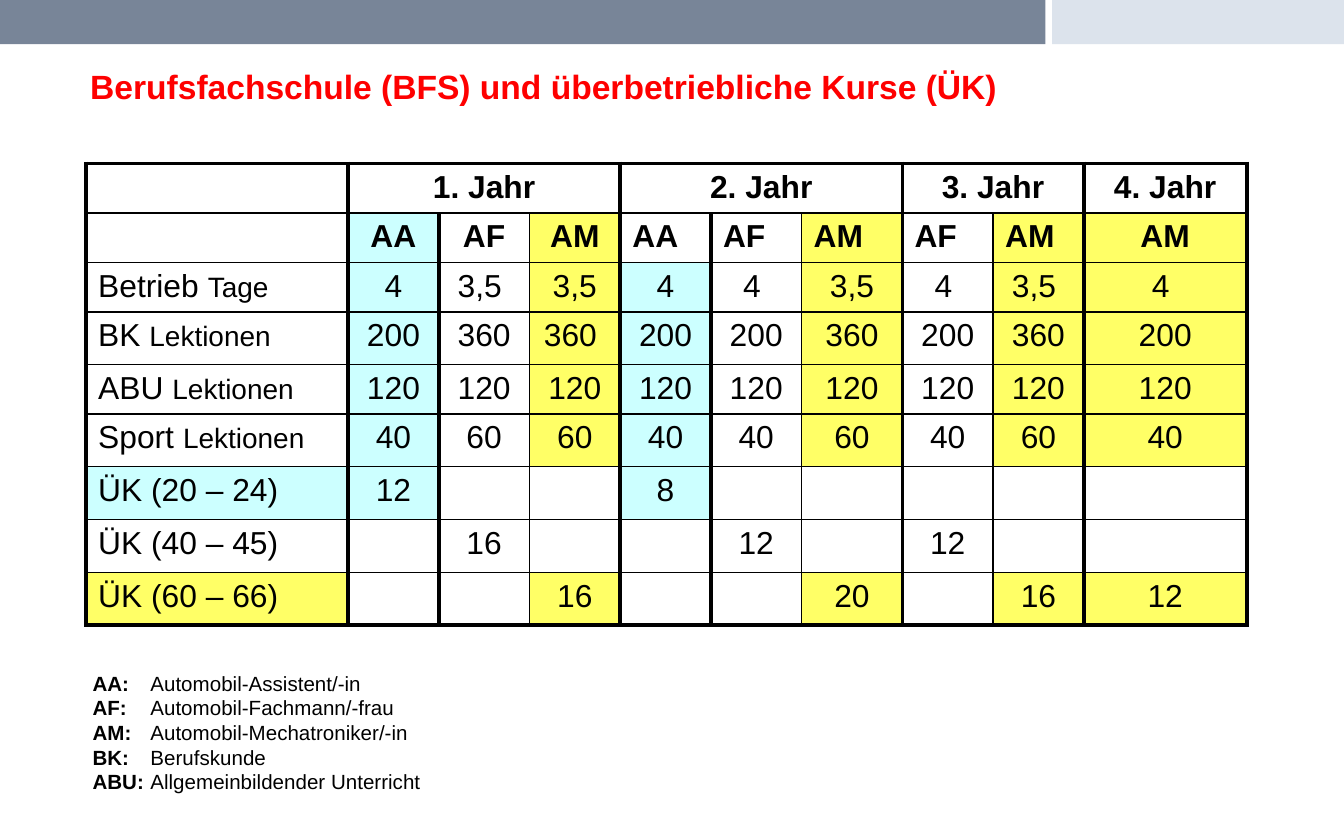
import pptx
import pptx.dml.color
import pptx.enum.shapes
import pptx.enum.text
import pptx.oxml
import pptx.oxml.ns
import pptx.util
from lxml import etree

Pt = pptx.util.Pt
RGBColor = pptx.dml.color.RGBColor
ALIGN = pptx.enum.text.PP_ALIGN
qn = pptx.oxml.ns.qn

BLACK = RGBColor(0x00, 0x00, 0x00)
RED = RGBColor(0xFE, 0x00, 0x00)
SLATE = RGBColor(0x78, 0x85, 0x98)
PALE_BLUE = RGBColor(0xDC, 0xE3, 0xEC)
CYAN = RGBColor(0xCC, 0xFF, 0xFF)
YELLOW = RGBColor(0xFF, 0xFF, 0x66)


def write(paragraph, text, size=17, bold=False, color=BLACK, align=ALIGN.LEFT):
    paragraph.alignment = align
    run = paragraph.add_run()
    run.text = text
    run.font.name = "Arial"
    run.font.size = Pt(size)
    run.font.bold = bold
    run.font.color.rgb = color


def set_borders(cell, widths):
    properties = cell._tc.get_or_add_tcPr()
    for position, (side, width) in enumerate(zip("LRTB", widths)):
        line = etree.Element(qn(f"a:ln{side}"), w=str(Pt(width)))
        fill = etree.SubElement(line, qn("a:solidFill"))
        etree.SubElement(fill, qn("a:srgbClr"), val=str(BLACK))
        properties.insert(position, line)


presentation = pptx.Presentation()
presentation.slide_width = Pt(720)
presentation.slide_height = Pt(450)
slide = presentation.slides.add_slide(presentation.slide_layouts[5])

# Bars along the top edge
for left, width, color in ((0, 560, SLATE), (563.6, 156.4, PALE_BLUE)):
    bar = slide.shapes.add_shape(
        pptx.enum.shapes.MSO_SHAPE.RECTANGLE, Pt(left), 0, Pt(width), Pt(23.6))
    bar.shadow.inherit = False
    bar.fill.solid()
    bar.fill.fore_color.rgb = color
    bar.line.fill.background()

# Title
title = slide.shapes.title
title.left, title.top, title.width, title.height = Pt(41.8), Pt(32), Pt(637), Pt(50)
frame = title.text_frame
frame.margin_left = frame.margin_right = Pt(6.5)
frame.margin_top = frame.margin_bottom = Pt(3.2)
frame.vertical_anchor = pptx.enum.text.MSO_ANCHOR.TOP
frame.auto_size = pptx.enum.text.MSO_AUTO_SIZE.NONE
frame.word_wrap = True
write(frame.paragraphs[0], "Berufsfachschule (BFS) und überbetriebliche Kurse (ÜK)",
      size=18, bold=True, color=RED)

# Table contents; a label's second part is set smaller
rows = [
    ["", "1. Jahr", "", "", "2. Jahr", "", "", "3. Jahr", "", "4. Jahr"],
    ["", "AA", "AF", "AM", "AA", "AF", "AM", "AF", "AM", "AM"],
    ["Betrieb Tage", "4", "3,5 ", "3,5", "4", "4 ", "3,5", "4 ", "3,5 ", "4 "],
    ["BK Lektionen", "200", "360", "360 ", "200", "200", "360", "200", "360", "200"],
    ["ABU Lektionen"] + ["120"] * 9,
    ["Sport Lektionen", "40", "60", "60", "40", "40", "60", "40", "60", "40"],
    ["ÜK (20 – 24)", "12", "", "", "8", "", "", "", "", ""],
    ["ÜK (40 – 45)", "", "16", "", "", "12", "", "12", "", ""],
    ["ÜK (60 – 66)", "", "", "16", "", "", "20", "", "16", "12"],
]
column_widths = [140.4] + [48.6] * 5 + [54] + [48.6] * 2 + [87.3]
row_heights = [26.4] * 3 + [28.3, 26.4] + [28.3] * 4
last_row = len(rows) - 1
profession_colors = {"AA": CYAN, "AM": YELLOW}
label_colors = {6: CYAN, 8: YELLOW}
thin_edges = {3, 6, 8}

table = slide.shapes.add_table(
    len(rows), len(column_widths), Pt(46.1), Pt(87.6),
    Pt(sum(column_widths)), Pt(sum(row_heights))).table
table.first_row = False
table.horz_banding = False
for column, width in zip(table.columns, column_widths):
    column.width = Pt(width)
for row, height in zip(table.rows, row_heights):
    row.height = Pt(height)
for first, last in ((1, 3), (4, 6), (7, 8)):
    table.cell(0, first).merge(table.cell(0, last))

for r, row in enumerate(rows):
    for c, text in enumerate(row):
        cell = table.cell(r, c)
        if cell.is_spanned:
            continue
        cell.margin_left = cell.margin_right = Pt(6.5)
        cell.margin_top = cell.margin_bottom = Pt(3.2)

        # Text
        paragraph = cell.text_frame.paragraphs[0]
        left_aligned = c == 0 or (r == 1 and 4 <= c <= 8)
        align = ALIGN.LEFT if left_aligned else ALIGN.CENTER
        if c == 0 and 2 <= r <= 5:
            subject, unit = text.split(" ")
            write(paragraph, subject + " ")
            write(paragraph, unit, size=15)
        else:
            write(paragraph, text, bold=r < 2, align=align)

        # Filled cells take the colour of their profession
        color = label_colors.get(r) if c == 0 else profession_colors.get(rows[1][c])
        if color and text and r > 0 and (r, c) != (1, 4):
            cell.fill.solid()
            cell.fill.fore_color.rgb = color
        else:
            cell.fill.background()

        # Borders
        right_edge = c + (cell.span_width if cell.is_merge_origin else 1)
        set_borders(cell, (
            1 if c in thin_edges else 2.25,
            1 if right_edge in thin_edges else 2.25,
            2.25 if r == 0 else 1,
            2.25 if r == last_row else 1))

# Legend of abbreviations
legend = slide.shapes.add_textbox(Pt(42.5), Pt(355.7), Pt(291.6), Pt(90))
legend.text_frame.word_wrap = True
abbreviations = (
    ("AA:", "Automobil-Assistent/-in"),
    ("AF:", "Automobil-Fachmann/-frau"),
    ("AM:", "Automobil-Mechatroniker/-in"),
    ("BK:", "Berufskunde"),
    ("ABU:", "Allgemeinbildender Unterricht"),
)
for index, (short, meaning) in enumerate(abbreviations):
    frame = legend.text_frame
    paragraph = frame.add_paragraph() if index else frame.paragraphs[0]
    paragraph.line_spacing = Pt(13.25)
    tabs = etree.SubElement(paragraph._p.get_or_add_pPr(), qn("a:tabLst"))
    etree.SubElement(tabs, qn("a:tab"), pos=str(Pt(31)), algn="l")
    write(paragraph, short + "\t", size=11, bold=True)
    write(paragraph, meaning, size=11)

presentation.save("out.pptx")
